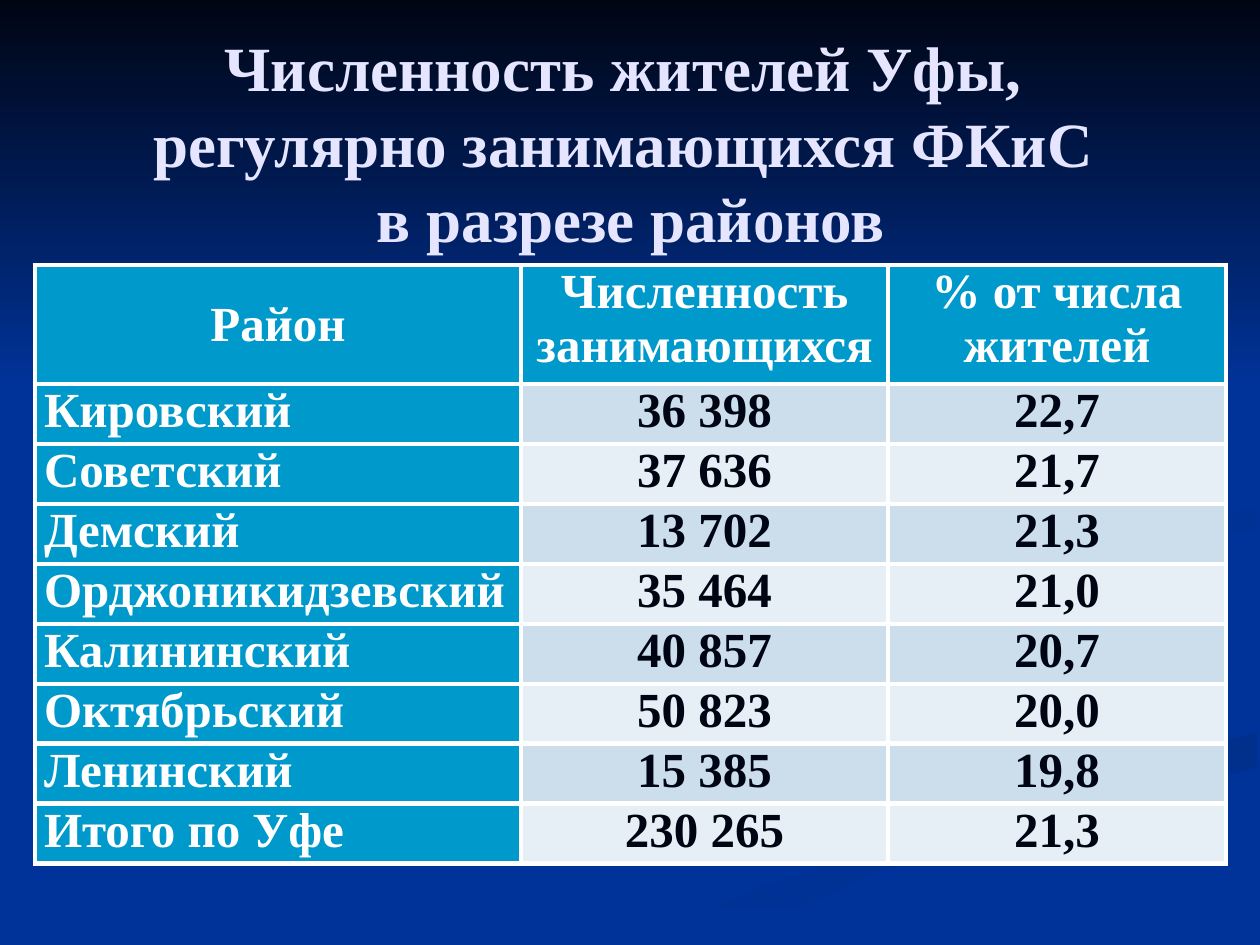
from lxml.etree import SubElement
from pptx import Presentation
from pptx.dml.color import RGBColor
from pptx.enum.shapes import MSO_SHAPE
from pptx.enum.text import MSO_ANCHOR, MSO_AUTO_SIZE, PP_ALIGN
from pptx.oxml.ns import qn
from pptx.util import Pt

SCALE = 914400 / 126
COLORS = {
    "bg": "003399", "night": "000514", "title": "E5E5FF", "white": "FFFFFF",
    "head": "0099CC", "band_dark": "CCDEEC", "band_light": "E7EFF6",
    "wave_low": "002F8C", "wave_high": "003091",
}
RGB = {name: RGBColor.from_string(value) for name, value in COLORS.items()}


def px(n):
    return round(n * SCALE)


def set_gradient(sp, start, angle):
    sp.shadow.inherit = False
    sp.line.fill.background()
    sp.fill.gradient()
    sp.fill.gradient_angle = angle
    for stop, color, position in zip(sp.fill.gradient_stops, (start, "bg"), (0, 1)):
        stop.color.rgb = RGB[color]
        stop.position = position


prs = Presentation()
prs.slide_width, prs.slide_height = px(1260), px(945)
s = prs.slides.add_slide(prs.slide_layouts[5])
s.background.fill.solid()
s.background.fill.fore_color.rgb = RGB["bg"]

waves = [
    ("wave_low", 270, [(634, 944), (719, 944), (876, 872), (1257, 767),
                       (1257, 732), (1047, 793), (755, 890)]),
    ("wave_high", 315, [(984, 580), (1041, 625), (1028, 578), (1106, 553),
                        (1257, 529), (1257, 507), (1035, 547)]),
]
for color, angle, points in waves:
    fb = s.shapes.build_freeform(*points[0], scale=SCALE)
    fb.add_line_segments(points[1:], close=True)
    set_gradient(fb.convert_to_shape(), color, angle)
sky = s.shapes.add_shape(MSO_SHAPE.RECTANGLE, 0, 0, px(1260), px(388))
set_gradient(sky, "night", 270)

title = s.shapes.title
title.left, title.top, title.width, title.height = map(px, (64, 106, 1134, 158))
s.shapes._spTree.append(title._element)
tf = title.text_frame
tf_format = {
    "word_wrap": True, "auto_size": MSO_AUTO_SIZE.NONE,
    "vertical_anchor": MSO_ANCHOR.MIDDLE,
    "margin_top": px(6), "margin_bottom": px(92),
}
for key, value in tf_format.items():
    setattr(tf, key, value)
p = tf.paragraphs[0]
p.text = "Численность жителей Уфы, \vрегулярно занимающихся ФКиС \vв разрезе районов"
p.alignment = PP_ALIGN.CENTER
text_format = {"name": "Times New Roman", "bold": True}
for r in p.runs:
    for key, value in text_format.items():
        setattr(r.font, key, value)
    r.font.size = Pt(36)
    r.font.color.rgb = RGB["title"]

rows = [
    ("Район", "Численность занимающихся", "% от числа жителей"),
    ("Кировский", "36 398", "22,7"),
    ("Советский", "37 636", "21,7"),
    ("Демский", "13 702", "21,3"),
    ("Орджоникидзевский", "35 464", "21,0"),
    ("Калининский", "40 857", "20,7"),
    ("Октябрьский", "50 823", "20,0"),
    ("Ленинский", "15 385", "19,8"),
    ("Итого по Уфе", "230 265", "21,3"),
]
widths = [486, 367, 338]
head_height, row_height = 119, 60
table_height = head_height + row_height * (len(rows) - 1)
table = s.shapes.add_table(len(rows), len(widths), px(35), px(265),
                           px(sum(widths)), px(table_height)).table
for column, width in zip(table.columns, widths):
    column.width = px(width)
for i, row in enumerate(table.rows):
    row.height = px(row_height if i else head_height)

cell_margins = {"margin_left": px(9), "margin_right": px(9),
                "margin_top": 0, "margin_bottom": 0}
for i, texts in enumerate(rows):
    for j, text in enumerate(texts):
        cell = table.cell(i, j)
        for key, value in cell_margins.items():
            setattr(cell, key, value)
        is_head = i == 0 or j == 0
        cell.vertical_anchor = MSO_ANCHOR.MIDDLE if i == j == 0 else MSO_ANCHOR.TOP
        p = cell.text_frame.paragraphs[0]
        p.alignment = PP_ALIGN.LEFT if i and j == 0 else PP_ALIGN.CENTER
        r = p.add_run()
        r.text = text
        for key, value in text_format.items():
            setattr(r.font, key, value)
        r.font.size = Pt(28)
        r.font.color.rgb = RGB["white" if is_head else "night"]
        tcPr = cell._tc.get_or_add_tcPr()
        for side in ("lnL", "lnR", "lnT", "lnB"):
            ln = SubElement(tcPr, qn(f"a:{side}"), w=str(Pt(3)))
            fill = SubElement(ln, qn("a:solidFill"))
            SubElement(fill, qn("a:srgbClr"), val=COLORS["white"])
        band = "band_dark" if i % 2 else "band_light"
        cell.fill.solid()
        cell.fill.fore_color.rgb = RGB["head" if is_head else band]

prs.save("out.pptx")
